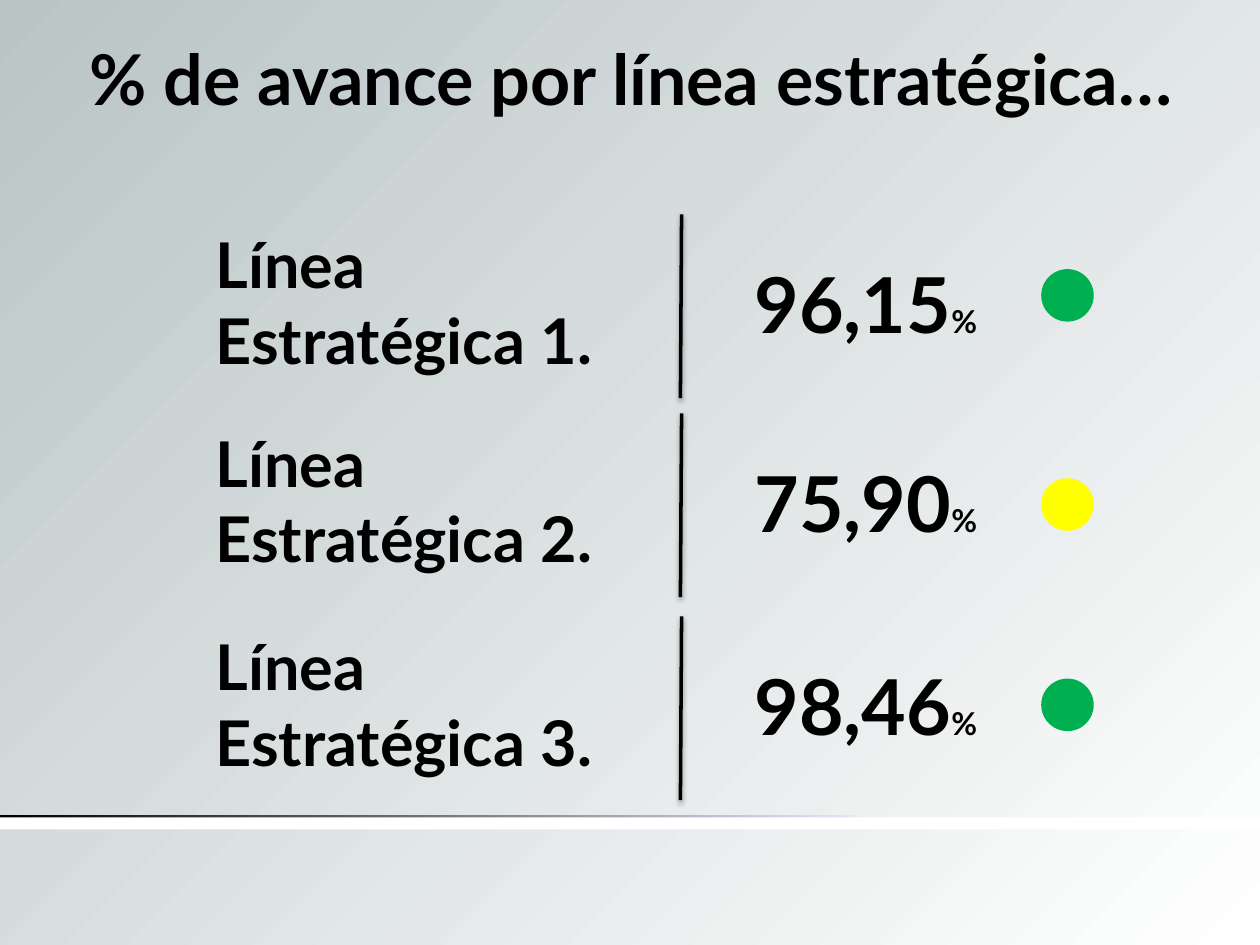
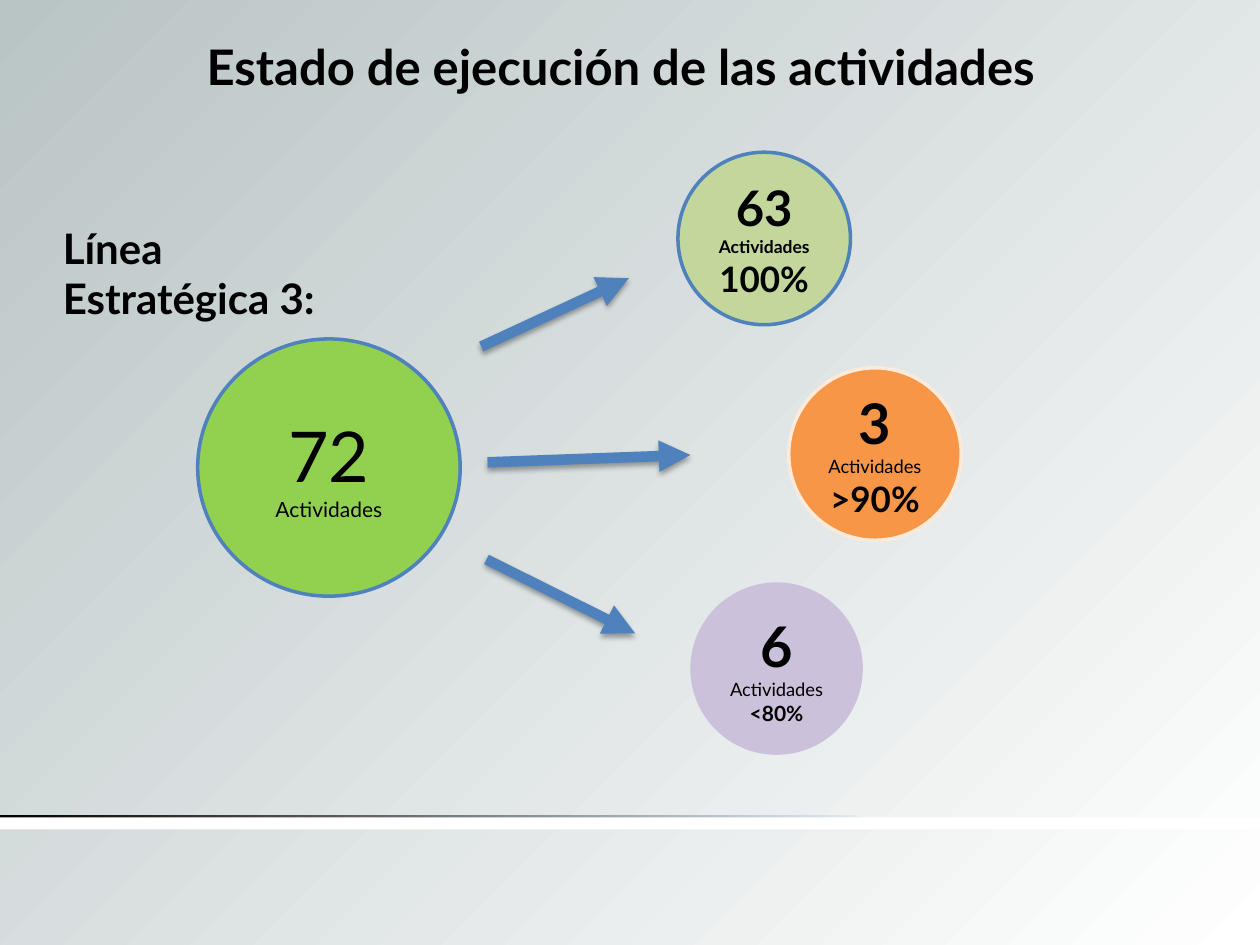
from dataclasses import dataclass
from lxml.etree import SubElement
from pptx import Presentation
from pptx.dml.color import RGBColor as RGB
from pptx.enum.shapes import MSO_CONNECTOR as CONN, MSO_SHAPE as SHAPE
from pptx.enum.text import MSO_ANCHOR as ANCHOR, MSO_AUTO_SIZE as FIT, PP_ALIGN as ALIGN
from pptx.oxml import parse_xml
from pptx.oxml.ns import nsdecls, qn
from pptx.util import Pt


@dataclass(frozen=True)
class Theme:
    font: str = "Lato"
    ink: str = "000000"
    white: str = "FFFFFF"
    haze: str = "B9C4C5"
    band_end: str = "E1E8F5"
    blue: str = "4F81BD"
    done: str = "00B050"
    partial: str = "FFFF00"
    total: str = "92D050"
    olive: str = "C3D69B"
    orange: str = "F79646"
    cream: str = "FDEADA"
    lilac: str = "CCC1DA"
    value: int = 44
    title: int = 40
    label: int = 36
    number: int = 32
    heading: int = 28
    subhead: int = 24
    rate: int = 20
    unit: int = 18
    note: int = 12
    small: float = 10.5
    tiny: int = 10


T = Theme()


def draw(s, box, paras=(), kind=None, fill=None, line=None, align=ALIGN.LEFT, **frame):
    box = [Pt(v) for v in box]
    if kind is None:
        sp = s.shapes.add_textbox(*box)
    else:
        sp = s.shapes.add_shape(kind, *box)
        sp.shadow.inherit = False
        if fill:
            sp.fill.solid()
            sp.fill.fore_color.rgb = RGB.from_string(fill)
        if line:
            sp.line.color.rgb = RGB.from_string(line)
            sp.line.width = Pt(2)
        else:
            sp.line.fill.background()
    tf = sp.text_frame
    for name, value in ({"word_wrap": True} | frame).items():
        setattr(tf, name, value)
    for i, runs in enumerate(paras):
        p = tf.add_paragraph() if i else tf.paragraphs[0]
        p.alignment = align
        for text, size, bold in runs:
            for j, part in enumerate(text.split("\n")):
                if j:
                    p.add_line_break()
                r = p.add_run()
                r.text = part
                fmt = {"name": T.font, "size": Pt(size), "bold": bold}
                for name, value in fmt.items():
                    setattr(r.font, name, value)
                r.font.color.rgb = RGB.from_string(T.ink)
    return sp


def connect(s, start, end, color, width, shade, dist, arrow=False):
    c = s.shapes.add_connector(CONN.STRAIGHT, *[Pt(v) for v in (*start, *end)])
    c.line.color.rgb = RGB.from_string(color)
    c.line.width = Pt(width)
    if arrow:
        SubElement(c.line._get_or_add_ln(), qn("a:tailEnd"), type="triangle")
    c._element.spPr.append(parse_xml(
        f'<a:effectLst {nsdecls("a")}><a:outerShdw blurRad="{Pt(3.1)}" dist="{Pt(dist)}" '
        f'dir="5400000" rotWithShape="0"><a:srgbClr val="{T.ink}">'
        f'<a:alpha val="{shade * 1000}"/></a:srgbClr></a:outerShdw></a:effectLst>'))


prs = Presentation()
prs.slide_width, prs.slide_height = Pt(720), Pt(540)

master = prs.slide_master
master.background.fill.gradient()
grad = next(master.element.iter(qn("a:gradFill")))
grad.getparent().replace(grad, parse_xml(
    f'<a:gradFill {nsdecls("a")} rotWithShape="1"><a:gsLst>'
    f'<a:gs pos="0"><a:srgbClr val="{T.white}"/></a:gs>'
    f'<a:gs pos="100000"><a:srgbClr val="{T.haze}"/></a:gs></a:gsLst>'
    '<a:path path="circle"><a:fillToRect l="100000" t="100000"/></a:path></a:gradFill>'))

slides = [prs.slides.add_slide(prs.slide_layouts[6]) for _ in range(2)]
for s in slides:
    band = draw(s, (0, 466, 490, 3.6), kind=SHAPE.RECTANGLE)
    band.fill.gradient()
    band.fill.gradient_angle = 0
    for stop, color in zip(band.fill.gradient_stops, (T.ink, T.band_end)):
        stop.color.rgb = RGB.from_string(color)
    draw(s, (0, 467, 720, 7), kind=SHAPE.RECTANGLE, fill=T.white)

progress, status = slides

draw(progress, (14.4, 16.5, 692, 75.6),
     [[("% de avance por línea estratégica…", T.title, True)]], align=ALIGN.CENTER)
rows = [
    ("96,15", 125.3, 154.8, T.done),
    ("75,90", 239, 274.3, T.partial),
    ("98,46", 355, 388.8, T.done),
]
for n, (value, top, dot_top, color) in enumerate(rows, 1):
    draw(progress, (116, top, 257, 96.5), [[(f"Línea\nEstratégica {n}.", T.label, True)]])
    draw(progress, (424, top + 18, 151, 60.5),
         [[(value, T.value, True), ("%", T.unit, True)]],
         word_wrap=False, auto_size=FIT.SHAPE_TO_FIT_TEXT)
    connect(progress, (388.8, top + 102.2), (389.5, top - 2.8), T.ink, 2, 38, 1.6)
    draw(progress, (596, dot_top, 28, 28), kind=SHAPE.OVAL, fill=color, line=color)

middle = {"vertical_anchor": ANCHOR.MIDDLE}
grow = middle | {"auto_size": FIT.SHAPE_TO_FIT_TEXT}
draw(status, (14.4, 17.3, 680.4, 41),
     [[("Estado de ejecución de las actividades", T.heading, True)]],
     align=ALIGN.CENTER, **grow)
draw(status, (28.8, 123, 168.5, 65.5),
     [[("Línea Estratégica 3:", T.subhead, True)]], **grow)

unit = "Actividades"
bubbles = [
    ((113, 193.7, 150, 147), T.total, T.blue,
     [("72", T.title, False), (unit, T.note, False)]),
    ((387.4, 87, 98.6, 98.6), T.olive, T.blue,
     [("63", T.heading, True), (unit, T.tiny, True), ("100%", T.rate, True)]),
    ((450.7, 210.2, 98.6, 98.6), T.orange, T.cream,
     [("3", T.number, True), (unit, T.small, False), (">90%", T.rate, True)]),
    ((394.5, 332.8, 98.6, 98.6), T.lilac, None,
     [("6", T.number, True), (unit, T.small, False), ("<80%", T.note, True)]),
]
for box, fill, line, lines in bubbles:
    draw(status, box, [[run] for run in lines], SHAPE.OVAL, fill, line, ALIGN.CENTER, **middle)

arrows = [
    ((275, 198), (359.3, 159)),
    ((278.6, 264.2), (394.5, 260)),
    ((278, 319.7), (363, 362)),
]
for start, end in arrows:
    connect(status, start, end, T.blue, 6, 35, 1.8, arrow=True)

prs.save("out.pptx")
